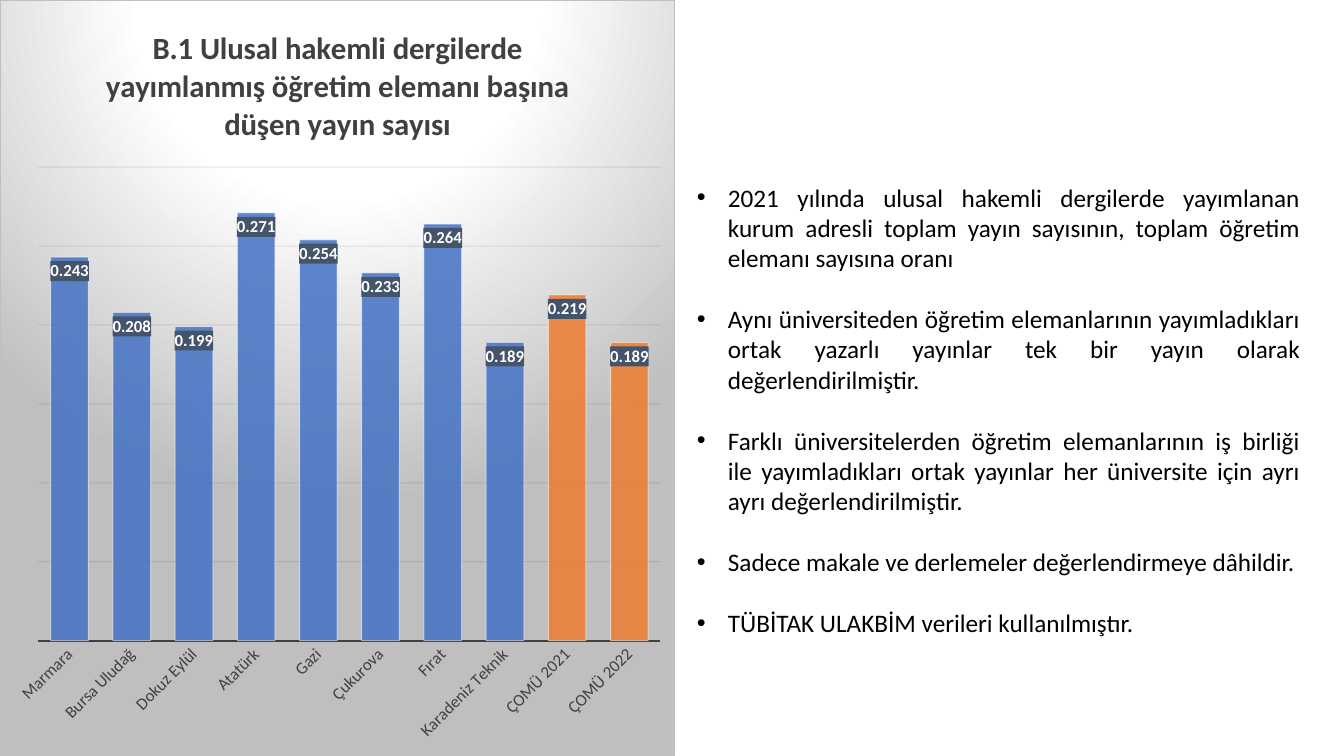
from lxml import etree
from pptx import Presentation
from pptx import util as u
from pptx.chart.data import CategoryChartData
from pptx.dml.color import RGBColor
from pptx.enum import chart as ch, text
from pptx.oxml import parse_xml
from pptx.oxml.ns import nsdecls, qn

PX = 914400 / 100.8
FONT = "Calibri"
COLORS = {"bar": "4472C4", "own": "ED7D31", "label": "44546A", "dark": "404040",
          "grid": "0D0D0D", "edge": "BFBFBF", "white": "FFFFFF", "black": "000000"}
RGB = {name: RGBColor.from_string(value) for name, value in COLORS.items()}
TITLE = "B.1 Ulusal hakemli dergilerde yayımlanmış öğretim elemanı başına düşen yayın sayısı"
RATIOS = {"Marmara": 0.243, "Bursa Uludağ": 0.208, "Dokuz Eylül": 0.199, "Atatürk": 0.271,
          "Gazi": 0.254, "Çukurova": 0.233, "Fırat": 0.264, "Karadeniz Teknik": 0.189,
          "ÇOMÜ 2021": 0.219, "ÇOMÜ 2022": 0.189}
NOTES = [
    "2021 yılında ulusal hakemli dergilerde yayımlanan kurum adresli toplam yayın sayısının, "
    "toplam öğretim elemanı sayısına oranı",
    "Aynı üniversiteden öğretim elemanlarının yayımladıkları ortak yazarlı yayınlar tek bir "
    "yayın olarak değerlendirilmiştir.",
    "Farklı üniversitelerden öğretim elemanlarının iş birliği ile yayımladıkları ortak yayınlar "
    "her üniversite için ayrı ayrı değerlendirilmiştir.",
    "Sadece makale ve derlemeler değerlendirmeye dâhildir.",
    "TÜBİTAK ULAKBİM verileri kullanılmıştır.",
]


def px(*lengths):
    return [u.Emu(round(n * PX)) for n in lengths]


def write(p, words, size, color="black", bold=False, align=None, before=0):
    p.alignment = align
    p.space_before = u.Pt(before)
    r = p.add_run()
    r.text = words
    r.font.name, r.font.size, r.font.bold = FONT, u.Pt(size), bold
    r.font.color.rgb = RGB[color]


prs = Presentation()
prs.slide_width, prs.slide_height = px(1344, 756)
slide = prs.slides.add_slide(prs.slide_layouts[6])

# Chart
data = CategoryChartData(number_format="0.000")
data.categories = list(RATIOS)
data.add_series(TITLE, list(RATIOS.values()))
chart = slide.shapes.add_chart(ch.XL_CHART_TYPE.COLUMN_CLUSTERED, *px(0, 0, 675, 756), data).chart
chart.has_legend = False
chart.font.name, chart.font.size = FONT, u.Pt(10)
write(chart.chart_title.text_frame.paragraphs[0], TITLE, 22, "dark", bold=True)
chart.chart_title.include_in_layout = False

cat = chart.category_axis
cat.major_tick_mark = ch.XL_TICK_MARK.NONE
cat.format.line.color.rgb, cat.format.line.width = RGB["dark"], u.Pt(1.5)
cat.tick_labels.font.name, cat.tick_labels.font.size = FONT, u.Pt(12)
cat.tick_labels.font.color.rgb = RGB["dark"]
cat_body = chart.element.find(".//" + qn("c:catAx")).find(".//" + qn("a:bodyPr"))
cat_body.set("rot", str(-45 * 60000))
cat_body.set("vert", "horz")

val = chart.value_axis
val.visible = False
val.minimum_scale, val.maximum_scale, val.major_unit = 0, 0.3, 0.05
val.has_major_gridlines = True
val.major_gridlines.format.line.color.rgb = RGB["grid"]
val.major_gridlines.format.line.width = u.Pt(0.75)

# Bars and their labels
plot = chart.plots[0]
plot.gap_width = 65
plot.vary_by_categories = False
ser = plot.series[0]
ser.invert_if_negative = False
own_points = [ser.points[i] for i, name in enumerate(RATIOS) if name.startswith("ÇOMÜ")]
for item, color in [(ser, "bar")] + [(point, "own") for point in own_points]:
    item.format.fill.solid()
    item.format.fill.fore_color.rgb = RGB[color]
    item.format.line.color.rgb, item.format.line.width = RGB["white"], u.Pt(0.75)

plot.has_data_labels = True
labels = plot.data_labels
labels.show_value = True
labels.position = ch.XL_LABEL_POSITION.INSIDE_END
labels.font.name, labels.font.size, labels.font.bold = FONT, u.Pt(12), True
labels.font.color.rgb = RGB["white"]
label_text = chart.element.find(".//" + qn("c:dLbls")).find(qn("c:txPr"))
label_text.addprevious(parse_xml(
    f'<c:spPr {nsdecls("c", "a")}><a:solidFill><a:srgbClr val="{COLORS["label"]}"/>'
    '</a:solidFill></c:spPr>'))

for scope, color, percent in [("ser", "bar", 85), ("ser", "own", 85),
                              ("ser", "white", 50), ("majorGridlines", "grid", 10)]:
    for clr in chart.element.xpath(f'.//c:{scope}//a:srgbClr[@val="{COLORS[color]}"]'):
        etree.SubElement(clr, qn("a:alpha")).set("val", str(percent * 1000))

# Plot area and chart background
plot_area = chart.element.find(".//" + qn("c:plotArea"))
for old in plot_area.findall(qn("c:layout")):
    plot_area.remove(old)
sides = {"x": 38 / 675, "y": 167 / 756, "w": 623 / 675, "h": 474 / 756}
plot_area.insert(0, parse_xml(
    f'<c:layout {nsdecls("c")}><c:manualLayout><c:layoutTarget val="inner"/>'
    '<c:xMode val="edge"/><c:yMode val="edge"/>'
    + "".join(f'<c:{side} val="{share:.4f}"/>' for side, share in sides.items())
    + '</c:manualLayout></c:layout>'))
stops = "".join(f'<a:gs pos="{pos * 1000}"><a:srgbClr val="{COLORS[color]}"/></a:gs>'
                for pos, color in [(0, "white"), (39, "white"), (100, "edge")])
chart.element.find(qn("c:txPr")).addprevious(parse_xml(
    f'<c:spPr {nsdecls("c", "a")}><a:gradFill><a:gsLst>{stops}</a:gsLst><a:path path="circle">'
    '<a:fillToRect l="50000" t="-80000" r="50000" b="180000"/></a:path></a:gradFill>'
    f'<a:ln w="{u.Pt(0.75)}"><a:solidFill><a:srgbClr val="{COLORS["edge"]}"/></a:solidFill></a:ln>'
    '</c:spPr>'))

# Notes
tf = slide.shapes.add_textbox(*px(687, 177, 623, 468)).text_frame
tf.word_wrap = True
tf.auto_size = text.MSO_AUTO_SIZE.SHAPE_TO_FIT_TEXT
indent = px(31)[0]
for i, note in enumerate(NOTES):
    p = tf.add_paragraph() if i else tf.paragraphs[0]
    write(p, note, 18, align=text.PP_ALIGN.JUSTIFY, before=22 if i else 0)
    pPr = p._p.get_or_add_pPr()
    pPr.set("marL", str(indent))
    pPr.set("indent", str(-indent))
    etree.SubElement(pPr, qn("a:buFont")).set("typeface", "Arial")
    etree.SubElement(pPr, qn("a:buChar")).set("char", "•")

prs.save("out.pptx")
